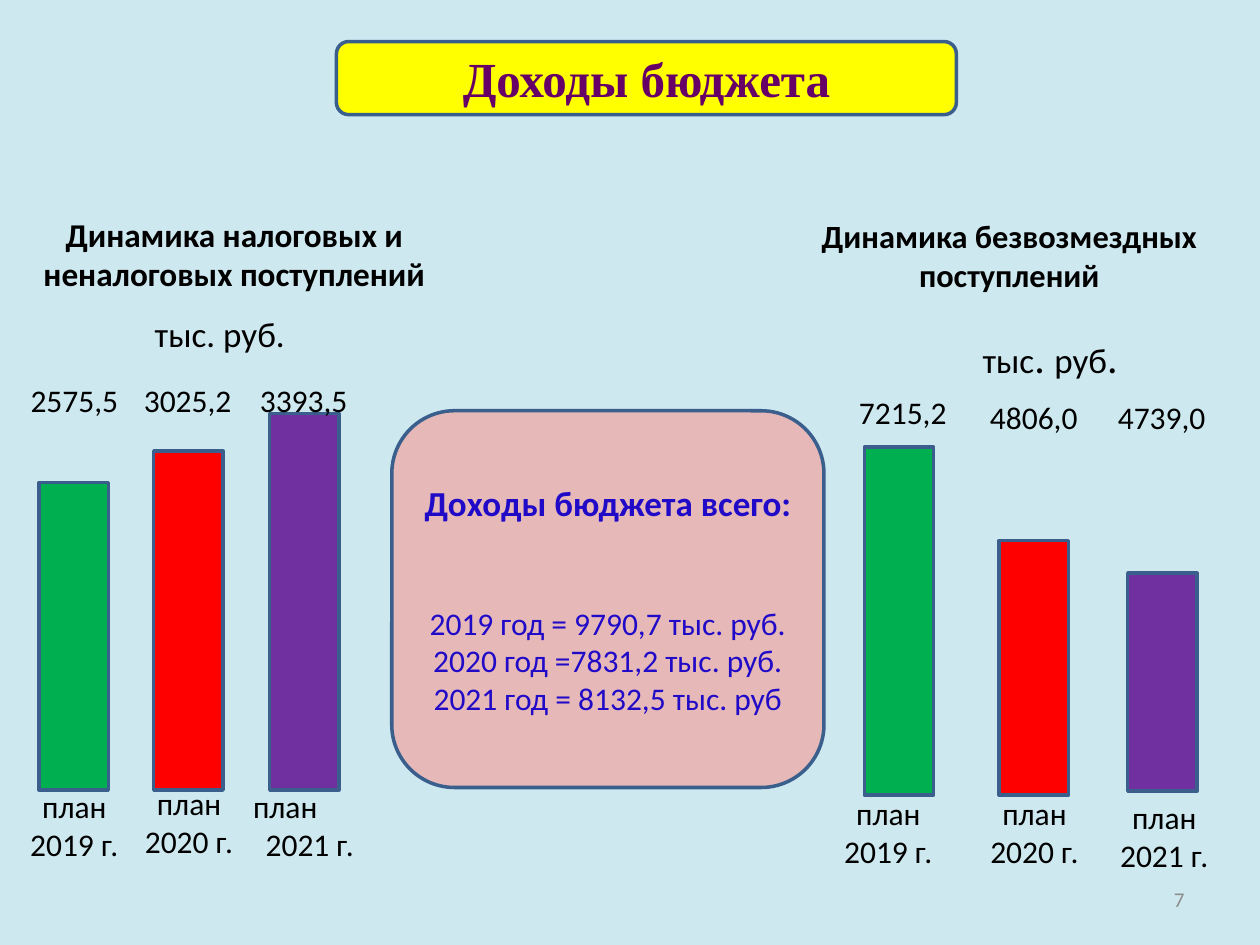
from pptx import Presentation
from pptx.dml.color import RGBColor
from pptx.enum.shapes import MSO_SHAPE as Preset
from pptx.enum.text import MSO_ANCHOR as Anchor, PP_ALIGN as Align
from pptx.util import Inches, Pt

THEME = {
    "background": "CEE8EF", "outline": "3A5F8C", "text": "000000",
    "title": "660066", "title_panel": "FFFF00", "total": "2009C7",
    "total_panel": "E6B9B8", "muted": "8C8C8C",
    "bars": ("00B050", "FF0000", "7030A0"),
    "body_font": "Calibri", "title_font": "Times New Roman",
    "title_size": 28, "heading_size": 19, "heading_small": 18.5,
    "unit_size": 20, "unit_large": 24, "label_size": 18, "number_size": 12,
}
BAR_WIDTH = 0.55

TITLE = "Доходы бюджета"
TITLE_BOX = (2.67, 0.33, 4.92, 0.58)
TOTAL_BOX = (3.11, 3.26, 3.43, 2.99)
TOTAL_HEADING = "Доходы бюджета всего:"
TOTALS = ["2019 год = 9790,7 тыс. руб.", "2020 год =7831,2 тыс. руб.",
          "2021 год = 8132,5 тыс. руб"]
HEADINGS = [
    (["Динамика налоговых и неналоговых поступлений"],
     (0.08, 1.68, 3.56, 0.7), "heading_size"),
    (["Динамика безвозмездных", "поступлений"],
     (6.24, 1.68, 3.54, 0.7), "heading_small"),
]
BARS = [
    [(0.31, 3.83, 6.27), (1.22, 3.58, 6.27), (2.14, 3.28, 6.27)],
    [(6.86, 3.55, 6.31), (7.93, 4.29, 6.31), (8.95, 4.55, 6.28)],
]
VALUES = [
    (Anchor.MIDDLE, [("2575,5", (0.08, 3.07, 1.02, 0.21)),
                     ("3025,2", (0.97, 3.07, 1.04, 0.21)),
                     ("3393,5", (1.9, 3.07, 1.02, 0.21))]),
    (Anchor.TOP, [("7215,2", (6.59, 3.07, 1.15, 0.4)),
                  ("4806,0", (7.69, 3.11, 1.03, 0.4)),
                  ("4739,0", (8.77, 3.11, 0.9, 0.4))]),
]
YEARS = [
    ("план 2019 г.", (0.08, 6.37, 1.02, 0.35)),
    ("план 2020 г.", (0.99, 6.25, 1.02, 0.55)),
    ("план 2019 г.", (6.54, 6.43, 1.02, 0.35)),
    ("план 2020 г.", (7.75, 6.43, 0.92, 0.35)),
    ("план 2021 г.", (8.7, 6.47, 1.08, 0.33)),
]
SHIFTED_YEAR = ["план", "2021 г."]
SHIFTED_YEAR_BOX = (1.89, 6.31, 1.04, 0.47)
SHIFTED_YEAR_INDENTS = (0.02, 0.12)
UNIT = "тыс. руб."
UNIT_BOX = (0.08, 2.38, 4.06, 4.32)
UNIT_INDENT = 1.05
MIXED_UNIT = [("тыс", "unit_size"), (". ", "unit_large"),
              ("руб", "unit_size"), (".", "unit_large")]
MIXED_UNIT_BOX = (7, 2.58, 2.67, 0.5)
NUMBER = "7"
NUMBER_BOX = (7.17, 6.94, 2.33, 0.4)


def color(name):
    return RGBColor.from_string(THEME.get(name, name))


def apply(target, values):
    for name, value in values.items():
        setattr(target, name, value)


def place(shape, box):
    apply(shape, dict(zip(("left", "top", "width", "height"), map(Inches, box))))


def style_run(run, size="label_size", tint="text", bold=False, font="body_font"):
    apply(run.font, {"size": Pt(THEME[size]), "name": THEME[font], "bold": bold})
    run.font.color.rgb = color(tint)


def write(shape, lines, align=Align.CENTER, anchor=Anchor.MIDDLE, wrap=True, **style):
    frame = shape.text_frame
    apply(frame, {"word_wrap": wrap, "vertical_anchor": anchor})
    frame.text = "\n".join(lines)
    for paragraph in frame.paragraphs:
        paragraph.alignment = align
        style_run(paragraph.runs[0], **style)
    return frame


def add_text(slide, box, lines, **options):
    return write(slide.shapes.add_textbox(*map(Inches, box)), lines, **options)


def add_panel(slide, preset, box, fill):
    shape = slide.shapes.add_shape(preset, *map(Inches, box))
    shape.shadow.inherit = False
    shape.fill.solid()
    shape.fill.fore_color.rgb = color(fill)
    shape.line.color.rgb = color("outline")
    shape.line.width = Pt(2)
    return shape


def indent(paragraph, inches):
    paragraph._p.get_or_add_pPr().set("marL", str(Inches(inches)))


def add_units(slide):
    frame = add_text(slide, UNIT_BOX, [UNIT], align=Align.LEFT,
                     anchor=Anchor.TOP, size="unit_size")
    frame.margin_top = Inches(0.1)
    indent(frame.paragraphs[0], UNIT_INDENT)
    frame = slide.shapes.add_textbox(*map(Inches, MIXED_UNIT_BOX)).text_frame
    frame.word_wrap = True
    paragraph = frame.paragraphs[0]
    paragraph.alignment = Align.CENTER
    for text, size in MIXED_UNIT:
        run = paragraph.add_run()
        run.text = text
        style_run(run, size=size)


def add_bars(slide):
    for group in BARS:
        for (left, top, bottom), fill in zip(group, THEME["bars"]):
            add_panel(slide, Preset.RECTANGLE, (left, top, BAR_WIDTH, bottom - top), fill)


def add_labels(slide):
    for anchor, values in VALUES:
        for text, box in values:
            add_text(slide, box, [text], anchor=anchor, wrap=box[2] > 0.9)
    for text, box in YEARS:
        add_text(slide, box, [text])
    frame = add_text(slide, SHIFTED_YEAR_BOX, SHIFTED_YEAR, align=Align.LEFT)
    for paragraph, inches in zip(frame.paragraphs, SHIFTED_YEAR_INDENTS):
        indent(paragraph, inches)


def add_total(slide):
    panel = add_panel(slide, Preset.ROUNDED_RECTANGLE, TOTAL_BOX, "total_panel")
    frame = write(panel, [TOTAL_HEADING, *TOTALS], tint="total")
    style_run(frame.paragraphs[0].runs[0], size="unit_size", tint="total", bold=True)
    frame.paragraphs[1].space_before = Pt(46)


def add_title(slide):
    panel = add_panel(slide, Preset.ROUNDED_RECTANGLE, TITLE_BOX, "title_panel")
    title = slide.shapes.title
    place(title, TITLE_BOX)
    write(title, [TITLE], size="title_size", tint="title", bold=True, font="title_font")
    panel._element.addnext(title._element)


def main():
    presentation = Presentation()
    apply(presentation, {"slide_width": Inches(10), "slide_height": Inches(7.5)})
    slide = presentation.slides.add_slide(presentation.slide_layouts[5])
    slide.background.fill.solid()
    slide.background.fill.fore_color.rgb = color("background")
    for lines, box, size in HEADINGS:
        add_text(slide, box, lines, anchor=Anchor.BOTTOM, size=size, bold=True)
    add_text(slide, NUMBER_BOX, [NUMBER], align=Align.RIGHT, size="number_size", tint="muted")
    add_units(slide)
    add_bars(slide)
    add_labels(slide)
    add_total(slide)
    add_title(slide)
    presentation.save("out.pptx")


if __name__ == "__main__":
    main()
